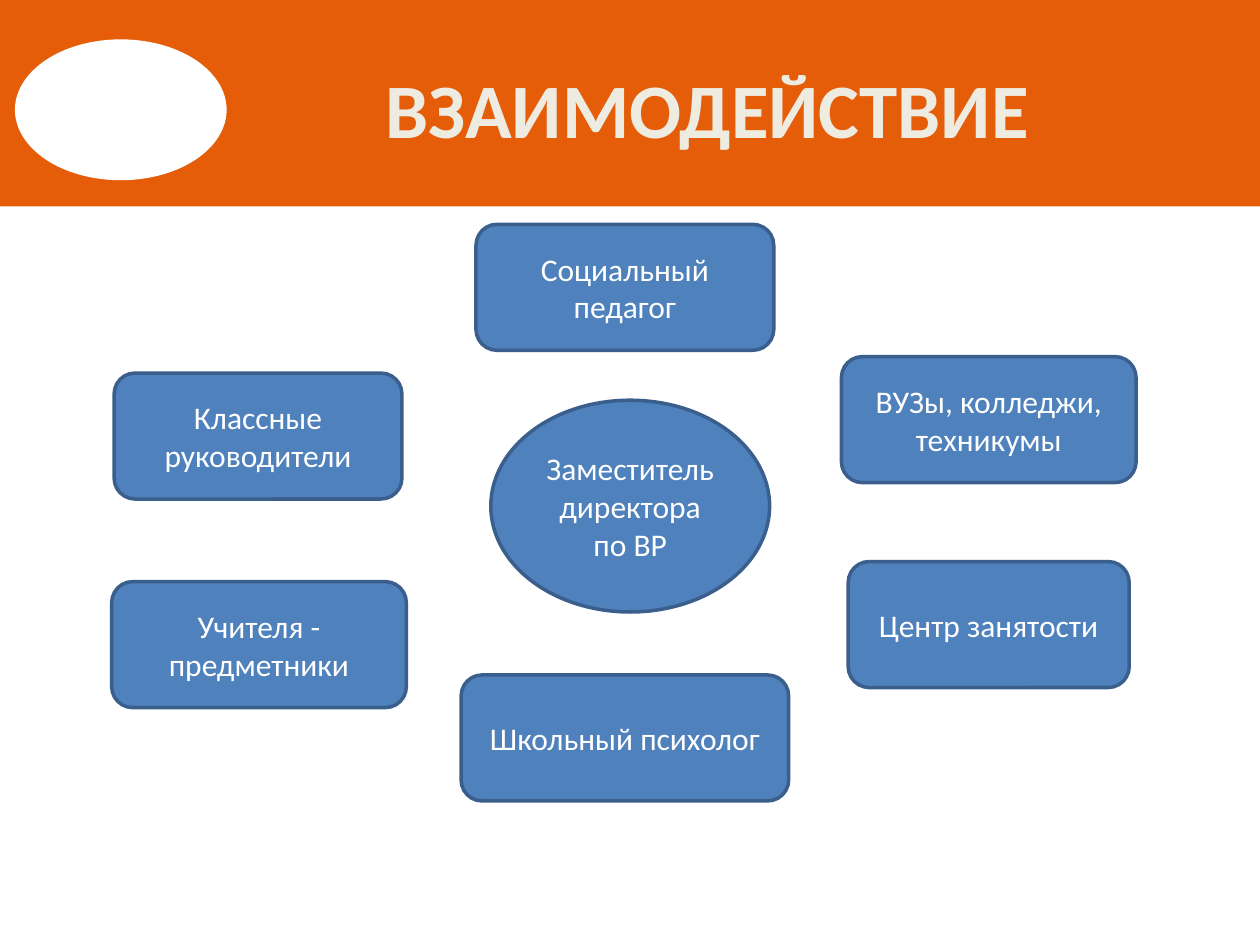
import pptx
import pptx.util
import pptx.dml.color
import pptx.enum.shapes
import pptx.enum.text

Pt = pptx.util.Pt
SHAPES = pptx.enum.shapes.MSO_SHAPE

COLORS = {
    "band": "E55D09",
    "white": "FFFFFF",
    "title": "EEECE1",
    "node": "4F81BD",
    "node_line": "3A5F8C",
}
FONT = "Calibri"
SLIDE_SIZE = (720, 540)
BAND_HEIGHT = 118
BADGE_FRAME = (8.5, 22.5, 121, 80.5)
TITLE = "ВЗАИМОДЕЙСТВИЕ "
TITLE_FRAME = (134.6, 16.5, 549.4, 90)

HUB = ("Заместитель директора по ВР", (280.5, 228.7, 159.3, 121))
PARTNER_HEIGHT = 72
# Text, left, top, width
PARTNERS = [
    ("Классные руководители", 65.2, 213.2, 164.5),
    ("Социальный педагог", 272, 128.2, 170.2),
    ("ВУЗы, колледжи, техникумы", 480.8, 203.8, 168.4),
    ("Школьный психолог", 263.5, 385.7, 187.2),
    ("Учителя - предметники", 63.8, 332.4, 168.4),
    ("Центр занятости", 484.7, 320.9, 160.6),
]


def rgb(name):
    return pptx.dml.color.RGBColor.from_string(COLORS[name])


def add_shape(page, kind, frame, fill, line=None):
    shape = page.shapes.add_shape(kind, *map(Pt, frame))
    shape.shadow.inherit = False
    shape.fill.solid()
    shape.fill.fore_color.rgb = rgb(fill)
    if line:
        shape.line.color.rgb = rgb(line)
        shape.line.width = Pt(2)
    else:
        shape.line.fill.background()
    return shape


def write_centred(box, text, size, color, bold=False):
    frame = box.text_frame
    frame.word_wrap = True
    frame.vertical_anchor = pptx.enum.text.MSO_ANCHOR.MIDDLE
    para = frame.paragraphs[0]
    para.text = text
    para.alignment = pptx.enum.text.PP_ALIGN.CENTER
    para.font.name = FONT
    para.font.size = Pt(size)
    para.font.bold = bold
    para.font.color.rgb = rgb(color)


def add_node(page, kind, frame, text):
    node = add_shape(page, kind, frame, "node", "node_line")
    write_centred(node, text, 18, "white")


def main():
    deck = pptx.Presentation()
    deck.slide_width, deck.slide_height = map(Pt, SLIDE_SIZE)
    page = deck.slides.add_slide(deck.slide_layouts[6])

    add_shape(page, SHAPES.RECTANGLE, (0, 0, SLIDE_SIZE[0], BAND_HEIGHT), "band")
    add_shape(page, SHAPES.OVAL, BADGE_FRAME, "white")
    title = page.shapes.add_textbox(*map(Pt, TITLE_FRAME))
    write_centred(title, TITLE, 44, "title", bold=True)

    for text, left, top, width in PARTNERS:
        frame = (left, top, width, PARTNER_HEIGHT)
        add_node(page, SHAPES.ROUNDED_RECTANGLE, frame, text)
    hub_text, hub_frame = HUB
    add_node(page, SHAPES.OVAL, hub_frame, hub_text)

    deck.save("out.pptx")


if __name__ == "__main__":
    main()
